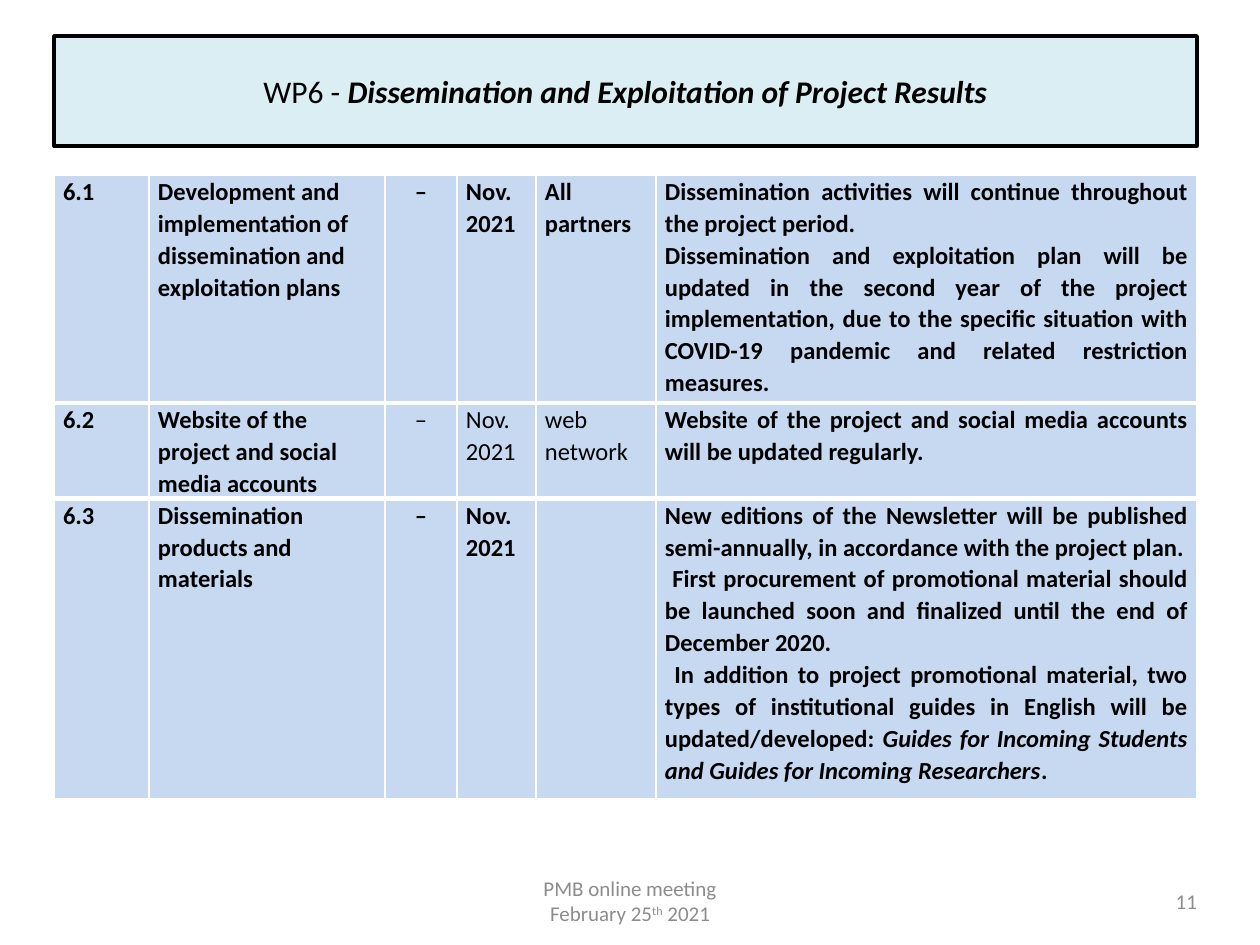
from lxml import etree
from pptx import Presentation
from pptx.dml.color import RGBColor
from pptx.enum.text import MSO_ANCHOR, PP_ALIGN
from pptx.oxml.ns import qn
from pptx.util import Pt

LEFT, CENTER, RIGHT, JUSTIFY = PP_ALIGN.LEFT, PP_ALIGN.CENTER, PP_ALIGN.RIGHT, PP_ALIGN.JUSTIFY
MIDDLE, TOP = MSO_ANCHOR.MIDDLE, MSO_ANCHOR.TOP
BLACK = RGBColor(0x00, 0x00, 0x00)
WHITE = RGBColor(0xFF, 0xFF, 0xFF)
GREY = RGBColor(0x8C, 0x8C, 0x8C)
PALE_TEAL = RGBColor(0xDB, 0xEE, 0xF4)
PALE_BLUE = RGBColor(0xC6, 0xD9, 0xF1)
FONT = "Calibri"
EMU_PER_PX = 914400 / 126

COLUMN_WIDTHS = [95, 236, 72, 79, 120, 541]
ROW_HEIGHTS = [228, 95, 300]
COLUMN_ALIGNS = [LEFT, LEFT, CENTER, LEFT, LEFT, JUSTIFY]
REGULAR_CELLS = {(1, 2), (1, 3), (1, 4)}
TASKS = [
    ["6.1", "Development and implementation of dissemination and exploitation plans",
     "–", "Nov. 2021", "All partners",
     ["Dissemination activities will continue throughout the project period.",
      "Dissemination and exploitation plan will be updated in the second year of the project "
      "implementation, due to the specific situation with COVID-19 pandemic and related "
      "restriction measures."]],
    ["6.2", "Website of the project and social media accounts",
     "–", "Nov. 2021", "web network",
     ["Website of the project and social media accounts will be updated regularly."]],
    ["6.3", "Dissemination products and materials",
     "–", "Nov. 2021", "",
     ["New editions of the Newsletter will be published semi-annually, in accordance with the "
      "project plan.",
      " First procurement of promotional material should be launched soon and finalized until "
      "the end of December 2020.",
      [(" In addition to project promotional material, two types of institutional guides in "
        "English will be updated/developed: ", {}),
       ("Guides for Incoming Students and Guides for Incoming Researchers", {"italic": True}),
       (".", {})]]],
]


def px(length):
    """Turn whole pixels into EMU."""
    return round(length * EMU_PER_PX)


def write(frame, paragraphs, size, color=BLACK, bold=False, align=LEFT, spacing=None):
    """Fill a text frame; a paragraph is a string or a list of (text, run format) pairs."""
    for index, content in enumerate(paragraphs):
        paragraph = frame.paragraphs[0] if index == 0 else frame.add_paragraph()
        paragraph.alignment = align
        paragraph.line_spacing = spacing
        pieces = [(content, {})] if isinstance(content, str) else content
        for text, style in pieces:
            run = paragraph.add_run()
            run.text = text
            run.font.name = FONT
            run.font.size = Pt(size)
            run.font.color.rgb = color
            run.font.bold = style.get("bold", bold)
            run.font.italic = style.get("italic", False)
            if "baseline" in style:
                run._r.get_or_add_rPr().set("baseline", str(style["baseline"]))


def set_borders(cell, widths):
    """Draw white cell edges with widths in points for left, right, top and bottom."""
    properties = cell._tc.get_or_add_tcPr()
    for index, (edge, width) in enumerate(zip("LRTB", widths)):
        line = etree.Element(qn(f"a:ln{edge}"), w=str(Pt(width)))
        fill = etree.SubElement(line, qn("a:solidFill"))
        etree.SubElement(fill, qn("a:srgbClr"), val=str(WHITE))
        properties.insert(index, line)


class SlideBuilder:
    """Holds the current slide and adds its styled elements."""

    def __init__(self, slide):
        self.slide = slide

    def title(self, box, pieces):
        """Place the framed title."""
        title = self.slide.shapes.title
        title.left, title.top, title.width, title.height = map(px, box)
        title.fill.solid()
        title.fill.fore_color.rgb = PALE_TEAL
        title.line.color.rgb = BLACK
        title.line.width = Pt(2)
        title.text_frame.vertical_anchor = MIDDLE
        write(title.text_frame, [pieces], size=18, align=CENTER)

    def task_table(self, left, top):
        """Add the table of tasks with thick rules between its rows."""
        table = self.slide.shapes.add_table(
            len(ROW_HEIGHTS), len(COLUMN_WIDTHS), px(left), px(top),
            px(sum(COLUMN_WIDTHS)), px(sum(ROW_HEIGHTS))).table
        table.first_row = table.horz_banding = False
        for column, width in zip(table.columns, COLUMN_WIDTHS):
            column.width = px(width)
        last = len(TASKS) - 1
        for r, (row, height, task) in enumerate(zip(table.rows, ROW_HEIGHTS, TASKS)):
            row.height = px(height)
            for c, (content, align) in enumerate(zip(task, COLUMN_ALIGNS)):
                cell = table.cell(r, c)
                cell.fill.solid()
                cell.fill.fore_color.rgb = PALE_BLUE
                cell.margin_left = cell.margin_right = px(9)
                cell.margin_top = cell.margin_bottom = 0
                cell.vertical_anchor = TOP
                set_borders(cell, [1, 1, 3 if r > 0 else 1, 3 if r < last else 1])
                if content:
                    paragraphs = [content] if isinstance(content, str) else content
                    write(cell.text_frame, paragraphs, size=14, align=align,
                          bold=(r, c) not in REGULAR_CELLS, spacing=1.07)

    def footer(self, box, paragraphs, align, margin_left=0):
        """Add a grey footer text box."""
        frame = self.slide.shapes.add_textbox(*map(px, box)).text_frame
        frame.word_wrap = True
        frame.vertical_anchor = MIDDLE
        frame.margin_left, frame.margin_right = px(margin_left), 0
        write(frame, paragraphs, size=12, color=GREY, align=align)


def main():
    """Build and save the slide."""
    deck = Presentation()
    deck.slide_width, deck.slide_height = px(1260), px(945)
    builder = SlideBuilder(deck.slides.add_slide(deck.slide_layouts[5]))
    builder.title((54, 36, 1143, 110), [
        ("WP6 - ", {}),
        ("Dissemination and Exploitation of Project Results", {"bold": True, "italic": True})])
    builder.task_table(54, 175)
    builder.footer((263, 876, 734, 50), [
        "PMB online meeting",
        [("February 25", {}), ("th", {"baseline": 30000}), (" 2021", {})]], CENTER)
    builder.footer((1007, 876, 190, 50), ["11"], RIGHT, margin_left=13)
    deck.save("out.pptx")


if __name__ == "__main__":
    main()
